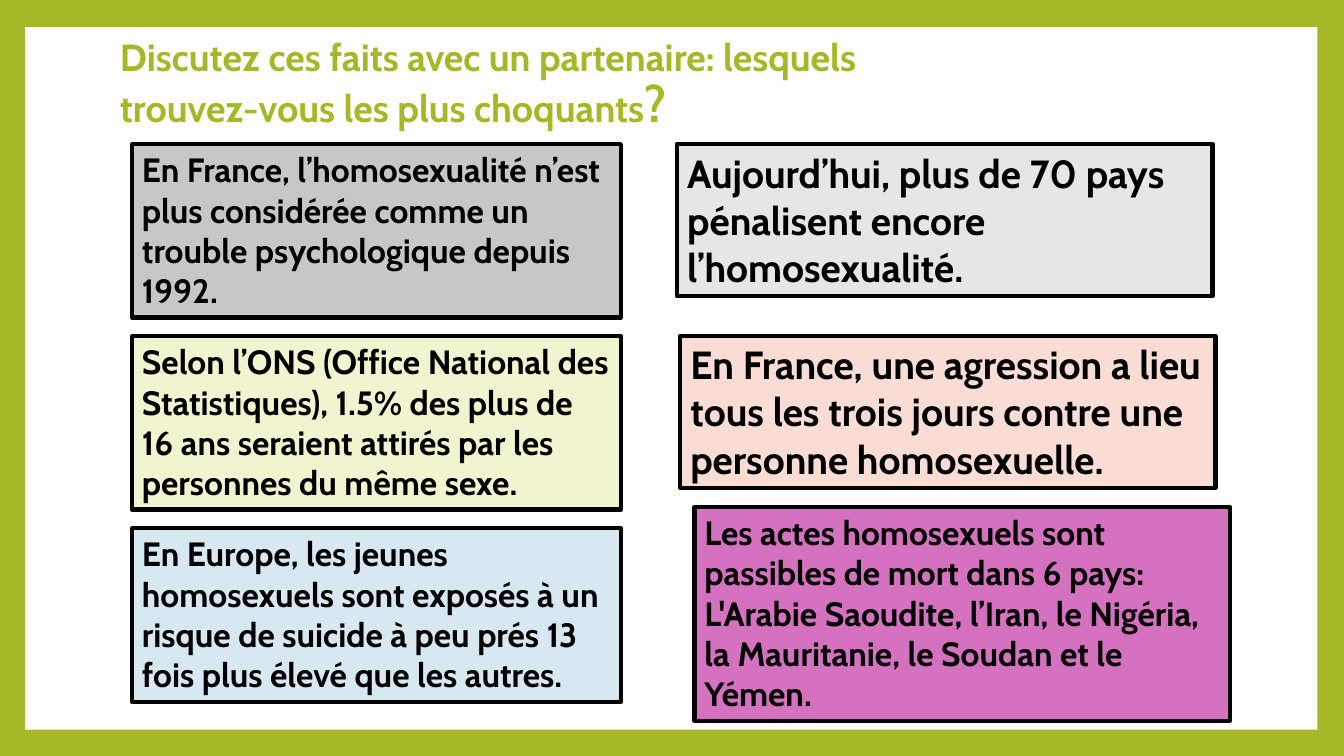
from pptx import Presentation
from pptx.dml.color import RGBColor
from pptx.enum.shapes import MSO_SHAPE
from pptx.enum.text import MSO_ANCHOR, MSO_AUTO_SIZE, PP_ALIGN
from pptx.util import Pt

RECTANGLE = MSO_SHAPE.RECTANGLE
TOP, MIDDLE = MSO_ANCHOR.TOP, MSO_ANCHOR.MIDDLE
NO_FIT, GROW = MSO_AUTO_SIZE.NONE, MSO_AUTO_SIZE.SHAPE_TO_FIT_TEXT
LEFT = PP_ALIGN.LEFT

GREEN = RGBColor(0xA6, 0xB7, 0x27)
WHITE = RGBColor(0xFF, 0xFF, 0xFF)
BLACK = RGBColor(0x00, 0x00, 0x00)
DARK_GREY = RGBColor(0xC7, 0xC7, 0xC7)
PALE_GREY = RGBColor(0xE6, 0xE6, 0xE6)
PALE_LIME = RGBColor(0xF0, 0xF5, 0xD0)
PALE_PINK = RGBColor(0xF9, 0xDD, 0xD4)
PALE_BLUE = RGBColor(0xD8, 0xE8, 0xF1)
MAGENTA = RGBColor(0xD4, 0x72, 0xBF)
FONT = "Cabin"

LEFT_FACTS = [
    ("En France, l’homosexualité n’est plus considérée comme un trouble "
     "psychologique depuis 1992.", DARK_GREY),
    ("Selon l’ONS (Office National des Statistiques), 1.5% des plus de 16 ans "
     "seraient attirés par les personnes du même sexe.", PALE_LIME),
    ("En Europe, les jeunes homosexuels sont exposés à un risque de suicide à "
     "peu prés 13 fois plus élevé que les autres.", PALE_BLUE),
]
RIGHT_FACTS = [
    ("Aujourd’hui, plus de 70 pays pénalisent encore l’homosexualité.",
     PALE_GREY, 28, (483.8, 103, 382.3, 108.7)),
    ("En France, une agression a lieu tous les trois jours contre une personne "
     "homosexuelle.", PALE_PINK, 28, (486, 239.8, 382.3, 108.7)),
    ("Les actes homosexuels sont passibles de mort dans 6 pays: L'Arabie "
     "Saoudite, l’Iran, le Nigéria, la Mauritanie, le Soudan et le Yémen.",
     MAGENTA, 24, (496.1, 362.2, 382.3, 152.6)),
]


def set_font(font, size, color):
    """Apply the bold slide typeface in a size and colour."""
    font.name, font.size, font.bold = FONT, Pt(size), True
    font.color.rgb = color


def add_panel(page, box, fill):
    """Add a flat filled rectangle in the given box."""
    panel = page.shapes.add_shape(RECTANGLE, *map(Pt, box))
    panel.shadow.inherit = False
    panel.fill.solid()
    panel.fill.fore_color.rgb = fill
    panel.line.fill.background()
    return panel


def add_frame(page, box):
    """Draw the green border around a white panel."""
    page.background.fill.solid()
    page.background.fill.fore_color.rgb = GREEN
    add_panel(page, box, WHITE)


def add_title(page, box):
    """Place the question in the title placeholder."""
    title = page.shapes.title
    title.left, title.top, title.width, title.height = map(Pt, box)
    frame = title.text_frame
    frame.word_wrap, frame.auto_size = True, NO_FIT
    frame.vertical_anchor = MIDDLE
    para = frame.paragraphs[0]
    para.alignment, para.line_spacing = LEFT, 0.9
    for text, size in (
        ("Discutez ces faits avec un partenaire: lesquels trouvez-vous les "
         "plus choquants", 27),
        ("?", 36),
    ):
        span = para.add_run()
        span.text = text
        set_font(span.font, size, GREEN)


def add_fact(page, box, text, fill, size):
    """Add one outlined fact box."""
    panel = add_panel(page, box, fill)
    panel.line.color.rgb, panel.line.width = BLACK, Pt(3)
    frame = panel.text_frame
    frame.word_wrap, frame.auto_size = True, GROW
    frame.vertical_anchor = TOP
    para = frame.paragraphs[0]
    para.text, para.alignment = text, LEFT
    set_font(para.font, size, BLACK)


def add_left_column(page, box, step):
    """Stack the left facts at an equal step below the given first box."""
    left, top, width, height = box
    for row, (text, fill) in enumerate(LEFT_FACTS):
        add_fact(page, (left, top + row * step, width, height), text, fill, 24)


def add_right_column(page):
    """Place the right facts in their own boxes."""
    for text, fill, size, box in RIGHT_FACTS:
        add_fact(page, box, text, fill, size)


def main():
    """Build and save the discussion slide."""
    deck = Presentation()
    deck.slide_width, deck.slide_height = Pt(960), Pt(540)
    page = deck.slides.add_slide(deck.slide_layouts[5])
    add_frame(page, (18, 19.4, 923, 501.8))
    page.shapes.title.element.addprevious(page.shapes[-1].element)
    add_title(page, (78.5, 9.4, 609, 104.4))
    add_left_column(page, (94.3, 103, 349.2, 123.8), 137.2)
    add_right_column(page)
    deck.save("out.pptx")


if __name__ == "__main__":
    main()
